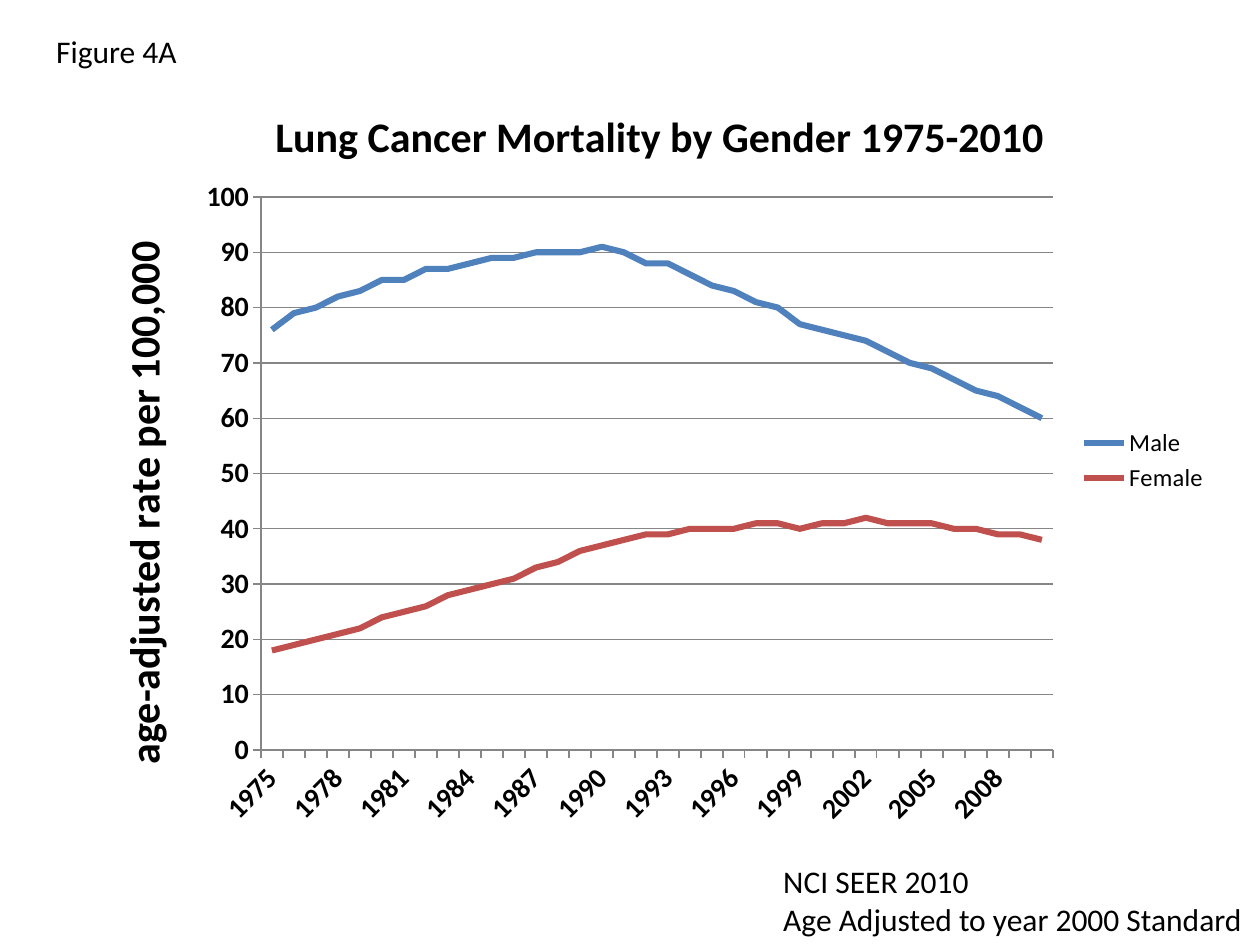
from dataclasses import dataclass

from lxml import etree
from pptx import Presentation
from pptx.chart.data import CategoryChartData
from pptx.dml.color import RGBColor
from pptx.enum.chart import XL_CHART_TYPE, XL_LEGEND_POSITION, XL_TICK_MARK
from pptx.enum.text import MSO_AUTO_SIZE
from pptx.oxml import parse_xml
from pptx.oxml.ns import nsdecls, qn
from pptx.util import Pt

LINE_CHART = XL_CHART_TYPE.LINE
LEGEND_RIGHT = XL_LEGEND_POSITION.RIGHT
TICK_OUTSIDE = XL_TICK_MARK.OUTSIDE
TICK_NONE = XL_TICK_MARK.NONE
FIT_SHAPE = MSO_AUTO_SIZE.SHAPE_TO_FIT_TEXT


@dataclass(frozen=True)
class Theme:
    font: str = "Calibri"
    text: RGBColor = RGBColor(0, 0, 0)
    rule: RGBColor = RGBColor(0x86, 0x86, 0x86)
    male: RGBColor = RGBColor(0x4F, 0x81, 0xBD)
    female: RGBColor = RGBColor(0xC0, 0x50, 0x4D)
    heading_size: Pt = Pt(24)
    note_size: Pt = Pt(18)
    axis_size: Pt = Pt(16)
    legend_size: Pt = Pt(14)
    base_size: Pt = Pt(10)


theme = Theme()


def style_font(font, size, bold=False):
    font.name = theme.font
    font.size = size
    font.bold = bold
    font.color.rgb = theme.text


def add_heading(text_frame, text):
    run = text_frame.paragraphs[0].add_run()
    run.text = text
    style_font(run.font, theme.heading_size, True)


presentation = Presentation()
presentation.slide_width = Pt(720)
presentation.slide_height = Pt(540)
slide = presentation.slides.add_slide(presentation.slide_layouts[6])

mortality = (
    ("Male", theme.male, (
        76, 79, 80, 82, 83, 85, 85, 87, 87, 88, 89, 89,
        90, 90, 90, 91, 90, 88, 88, 86, 84, 83, 81, 80,
        77, 76, 75, 74, 72, 70, 69, 67, 65, 64, 62, 60)),
    ("Female", theme.female, (
        18, 19, 20, 21, 22, 24, 25, 26, 28, 29, 30, 31,
        33, 34, 36, 37, 38, 39, 39, 40, 40, 40, 41, 41,
        40, 41, 41, 42, 41, 41, 41, 40, 40, 39, 39, 38)),
)

chart_data = CategoryChartData()
chart_data.categories = [str(year) for year in range(1975, 2011)]
for name, color, rates in mortality:
    chart_data.add_series(name, rates)

chart = slide.shapes.add_chart(
    LINE_CHART, Pt(56), Pt(45), Pt(642), Pt(436), chart_data).chart
style_font(chart.font, theme.base_size)
chart.has_title = True
add_heading(chart.chart_title.text_frame, "Lung Cancer Mortality by Gender 1975-2010")
chart.chart_title.include_in_layout = False

plot = chart.plots[0]
plot.vary_by_categories = False
for series, (name, color, rates) in zip(plot.series, mortality):
    series.smooth = False
    series.format.line.color.rgb = color
    series.format.line.width = Pt(3.5)

chart.has_legend = True
chart.legend.position = LEGEND_RIGHT
chart.legend.include_in_layout = False
style_font(chart.legend.font, theme.legend_size)

year_axis = chart.category_axis
rate_axis = chart.value_axis
rate_axis.minimum_scale = 0
rate_axis.maximum_scale = 100
rate_axis.major_unit = 10
rate_axis.has_major_gridlines = True
rate_axis.has_title = True
add_heading(rate_axis.axis_title.text_frame, "age-adjusted rate per 100,000")

for axis in (year_axis, rate_axis):
    axis.major_tick_mark = TICK_OUTSIDE
    axis.minor_tick_mark = TICK_NONE
    style_font(axis.tick_labels.font, theme.axis_size, True)
for line in (year_axis.format.line, rate_axis.format.line,
             rate_axis.major_gridlines.format.line):
    line.color.rgb = theme.rule
    line.width = Pt(0.75)

year_element = year_axis._element
year_element.find(qn("c:txPr")).find(qn("a:bodyPr")).set("rot", "-2700000")
label_skip = etree.Element(qn("c:tickLblSkip"), val="3")
year_element.find(qn("c:noMultiLvlLbl")).addprevious(label_skip)

plot_area = chart._chartSpace.chart.plotArea
for layout in plot_area.findall(qn("c:layout")):
    plot_area.remove(layout)
plot_area.insert(0, parse_xml(
    f'<c:layout {nsdecls("c")}><c:manualLayout><c:layoutTarget val="inner"/>'
    '<c:xMode val="edge"/><c:yMode val="edge"/><c:x val="0.145"/>'
    '<c:y val="0.155"/><c:w val="0.705"/><c:h val="0.725"/>'
    '</c:manualLayout></c:layout>'))

notes = (
    (25, 15, 104, 29, True, ("Figure 4A",)),
    (440.5, 489, 279.5, 51, False,
     ("NCI SEER 2010", "Age Adjusted to year 2000 Standard")),
)
for left, top, width, height, wraps, lines in notes:
    text_frame = slide.shapes.add_textbox(
        Pt(left), Pt(top), Pt(width), Pt(height)).text_frame
    text_frame.word_wrap = wraps
    text_frame.auto_size = FIT_SHAPE
    for index, text in enumerate(lines):
        paragraph = text_frame.add_paragraph() if index else text_frame.paragraphs[0]
        run = paragraph.add_run()
        run.text = text
        style_font(run.font, theme.note_size)

presentation.save("out.pptx")
